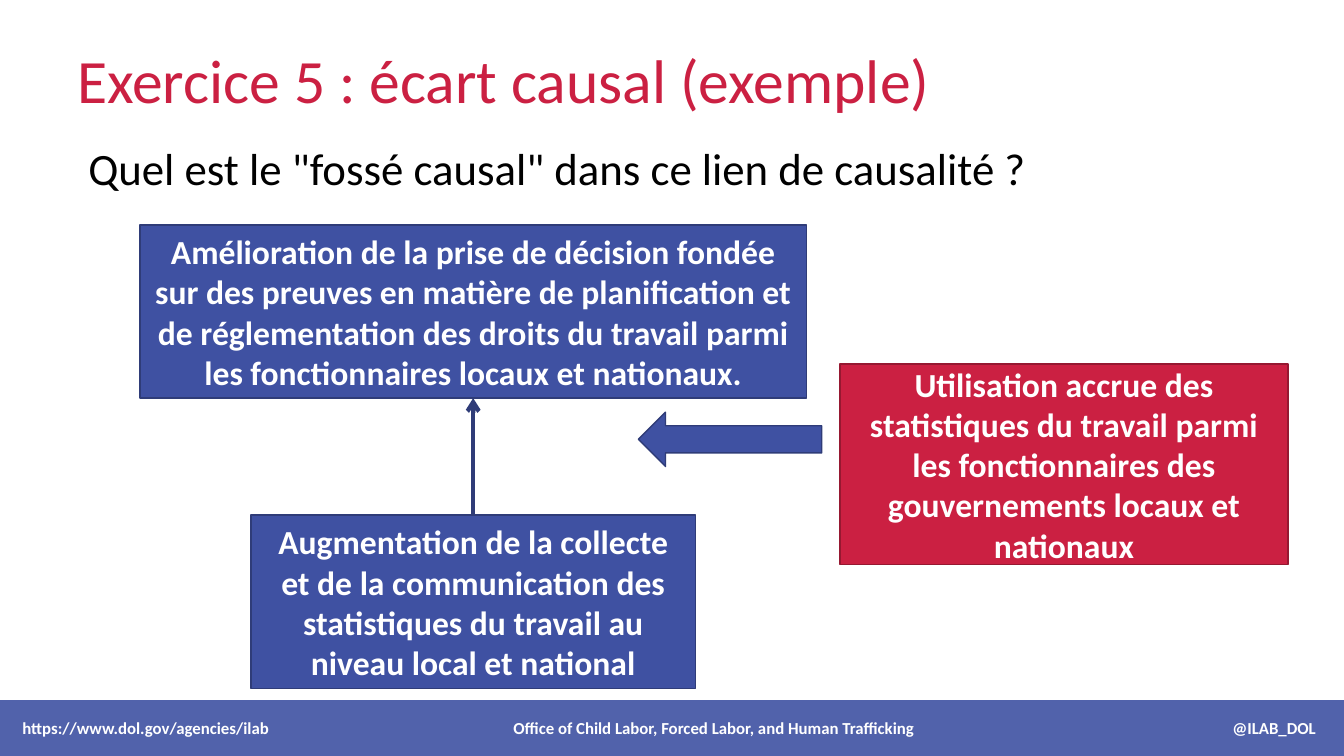
import pptx
import pptx.dml.color
import pptx.enum.shapes
import pptx.enum.text
import pptx.oxml.ns
import pptx.util

COLOURS = {"red": "CB2042", "dark red": "961831", "blue": "3F51A2",
           "dark blue": "2F3C78", "white": "FFFFFF", "black": "000000"}
COLUMNS, ROWS = 48, 27
SHAPES = pptx.enum.shapes.MSO_SHAPE
ALIGN = pptx.enum.text.PP_ALIGN


class CausalSlide:
    """Holds the slide, its grid and its text, box and arrow styles."""

    def __init__(self, deck):
        self.cell = deck.slide_width / COLUMNS, deck.slide_height / ROWS
        self.slide = deck.slides.add_slide(deck.slide_layouts[6])

    def place(self, left, top, width, height):
        return [pptx.util.Emu(round(cells * size))
                for cells, size in zip((left, top, width, height), self.cell * 2)]

    def across(self, columns):
        return pptx.util.Emu(round(columns * self.cell[0]))

    def colour(self, name):
        return pptx.dml.color.RGBColor.from_string(COLOURS[name])

    def append(self, parent, tag, **attributes):
        child = parent.makeelement(pptx.oxml.ns.qn(tag), attributes)
        parent.append(child)
        return child

    def set_words(self, shape, words, size, colour, bold=False, align=ALIGN.LEFT):
        frame = shape.text_frame
        frame_format = {"word_wrap": True, "vertical_anchor": pptx.enum.text.MSO_ANCHOR.MIDDLE}
        for name, value in frame_format.items():
            setattr(frame, name, value)
        paragraph = frame.paragraphs[0]
        paragraph.text = words
        paragraph.alignment = align
        font_format = {"name": "Calibri", "size": pptx.util.Pt(size), "bold": bold}
        for run in paragraph.runs:
            for name, value in font_format.items():
                setattr(run.font, name, value)
            run.font.color.rgb = self.colour(colour)
        return paragraph

    def text(self, area, words, size, colour):
        self.set_words(self.slide.shapes.add_textbox(*self.place(*area)), words, size, colour)

    def block(self, area, fill, edge=None, kind=SHAPES.RECTANGLE):
        shape = self.slide.shapes.add_shape(kind, *self.place(*area))
        shape.shadow.inherit = False
        shape.fill.solid()
        shape.fill.fore_color.rgb = self.colour(fill)
        if edge:
            shape.line.color.rgb = self.colour(edge)
            shape.line.width = pptx.util.Pt(1)
        else:
            shape.line.fill.background()
        return shape

    def statement(self, area, words, fill, edge):
        shape = self.block(area, fill, edge)
        self.set_words(shape, words, 24, "white", True, ALIGN.CENTER)
        return shape

    def link(self, cause, effect):
        arrow = self.slide.shapes.add_connector(
            pptx.enum.shapes.MSO_CONNECTOR.STRAIGHT, 0, 0, 0, 0)
        arrow.begin_connect(cause, 0)
        arrow.end_connect(effect, 2)
        arrow.line.color.rgb = self.colour("dark blue")
        arrow.line.width = pptx.util.Pt(3)
        properties = arrow._element.spPr
        self.append(properties.find(pptx.oxml.ns.qn("a:ln")), "a:tailEnd", type="arrow")
        self.append(properties, "a:effectLst")

    def footer(self, area, words, margin, stops, opacity):
        band = self.block(area, "blue")
        tint = band._element.spPr.find(".//" + pptx.oxml.ns.qn("a:srgbClr"))
        self.append(tint, "a:alpha", val=str(opacity * 1000))
        band.text_frame.margin_left = self.across(margin)
        line = self.set_words(band, "\t".join(words), 12, "white", True)
        tabs = self.append(line._p.get_or_add_pPr(), "a:tabLst")
        for column, align in stops:
            self.append(tabs, "a:tab", pos=str(self.across(column - margin)), algn=align)


def main():
    deck = pptx.Presentation()
    deck.slide_width, deck.slide_height = pptx.util.Inches(13.33), pptx.util.Inches(7.5)
    exercise = CausalSlide(deck)
    exercise.text((2.4, 1.7, 33.3, 2.23), "Exercice 5 : écart causal (exemple)", 44, "red")
    exercise.text((2.8, 4.35, 35, 3.28),
                  'Quel est le "fossé causal" dans ce lien de causalité ?', 32, "black")
    exercise.statement(
        (30, 13, 16, 7.16),
        "Utilisation accrue des statistiques du travail parmi les fonctionnaires "
        "des gouvernements locaux et nationaux", "red", "dark red")
    exercise.block((22.8, 14.72, 6.55, 1.94), "blue", "dark blue", SHAPES.LEFT_ARROW)
    collection = exercise.statement(
        (8.96, 18.4, 15.88, 6.19),
        "Augmentation de la collecte et de la communication des statistiques "
        "du travail au niveau local et national", "blue", "dark blue")
    decision = exercise.statement(
        (5, 8.03, 23.8, 6.19),
        "Amélioration de la prise de décision fondée sur des preuves en matière de "
        "planification et de réglementation des droits du travail parmi les "
        "fonctionnaires locaux et nationaux.", "blue", "dark blue")
    exercise.link(collection, decision)
    exercise.footer(
        (0, 25, COLUMNS, 2),
        ("https://www.dol.gov/agencies/ilab",
         "Office of Child Labor, Forced Labor, and Human Trafficking", "@ILAB_DOL"),
        0.8, ((25.5, "ctr"), (47, "r")), 90)
    deck.save("out.pptx")


if __name__ == "__main__":
    main()
